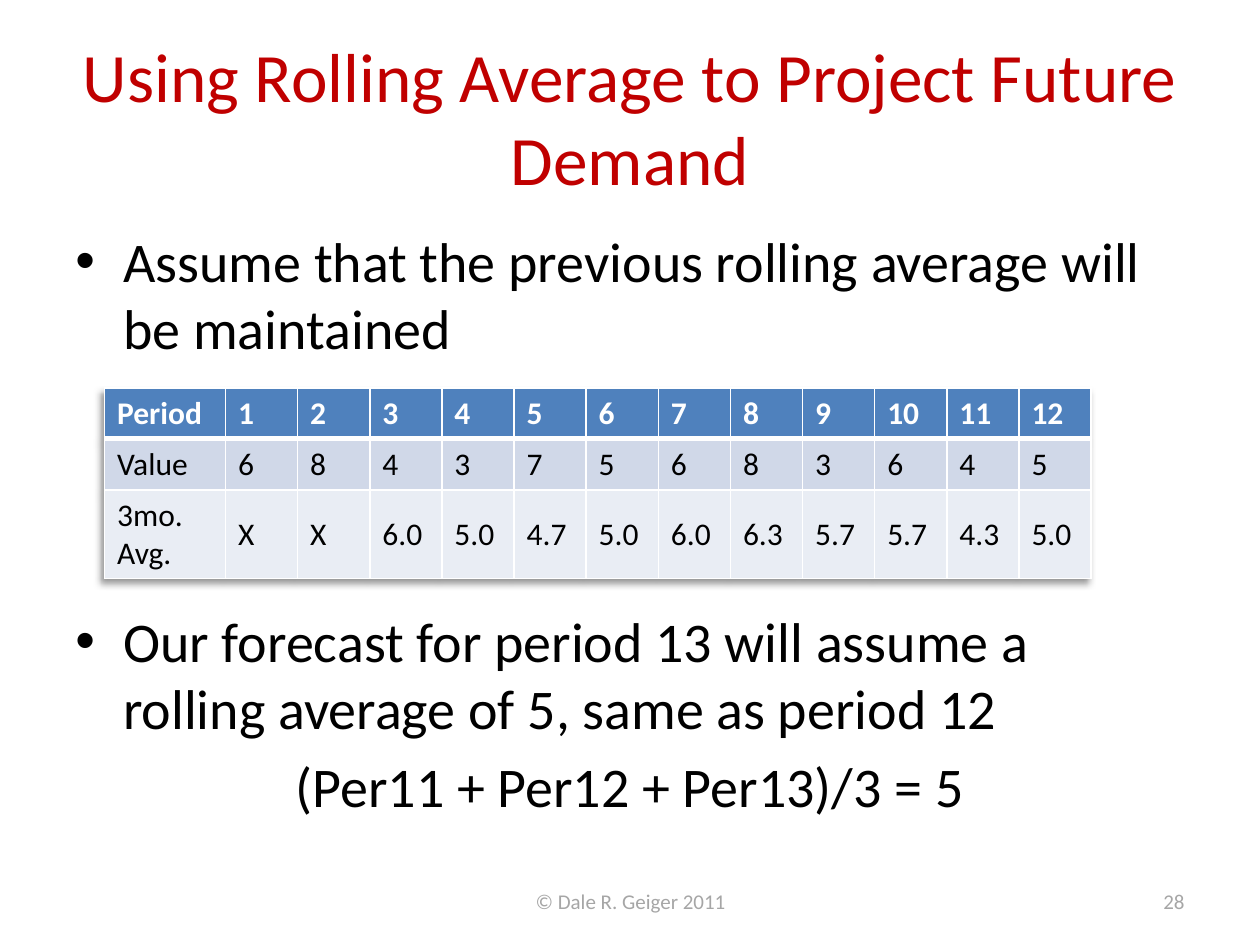
from dataclasses import dataclass

from lxml import etree
from pptx import Presentation
from pptx.dml.color import RGBColor
from pptx.enum.text import MSO_ANCHOR, PP_ALIGN
from pptx.oxml import parse_xml
from pptx.oxml.ns import nsdecls, qn
from pptx.util import Inches, Pt

LEFT, CENTER, RIGHT = PP_ALIGN.LEFT, PP_ALIGN.CENTER, PP_ALIGN.RIGHT
TOP, MIDDLE = MSO_ANCHOR.TOP, MSO_ANCHOR.MIDDLE
FONT = "Calibri"
COLORS = {
    "title": "C00000",
    "text": "000000",
    "footer": "A6A6A6",
    "white": "FFFFFF",
    "header": "4F81BD",
    "band": "D0D8E8",
    "pale": "E9EDF4",
}
BULLET_INDENT = Inches(0.38)
LABEL_WIDTH, TABLE_WIDTH = 0.96, 7.83


@dataclass
class Line:
    text: str
    align: PP_ALIGN = LEFT
    bullet: bool = False
    space_before: float = 0


@dataclass
class TextBlock:
    left: float
    top: float
    width: float
    height: float
    size: float
    color: str
    anchor: MSO_ANCHOR
    lines: list[Line]


@dataclass
class TableRow:
    values: list[str]
    height: float
    fill: str
    color: str = "text"
    bold: bool = False
    anchor: MSO_ANCHOR = MIDDLE
    bottom_border: float = 1


BLOCKS = [
    TextBlock(0.5, 0.3, 9, 1.25, 39.6, "title", MIDDLE,
              [Line("Using Rolling Average to Project Future Demand", CENTER)]),
    TextBlock(0.5, 1.75, 9, 4.95, 32, "text", TOP, [
        Line("Assume that the previous rolling average will be maintained", bullet=True),
        Line("Our forecast for period 13 will assume a rolling average of 5, "
             "same as period 12", bullet=True, space_before=140),
        Line("(Per11 + Per12 + Per13)/3 = 5", CENTER, space_before=6),
    ]),
    TextBlock(3.42, 6.95, 3.17, 0.4, 12, "footer", MIDDLE,
              [Line("© Dale R. Geiger 2011", CENTER)]),
    TextBlock(7.17, 6.95, 2.33, 0.4, 12, "footer", MIDDLE, [Line("28", RIGHT)]),
]
ROWS = [
    TableRow(["Period", *map(str, range(1, 13))], 0.4, "header", "white", True, TOP, 3),
    TableRow(["Value", *"684375683645"], 0.41, "band"),
    TableRow(["3mo. Avg.", "X", "X", "6.0", "5.0", "4.7", "5.0", "6.0", "6.3",
              "5.7", "5.7", "4.3", "5.0"], 0.7, "pale"),
]


def rgb(name: str) -> RGBColor:
    return RGBColor.from_string(COLORS[name])


def format_runs(para, size: float, color: str, bold: bool = False) -> None:
    for span in para.runs:
        span.font.name = FONT
        span.font.size = Pt(size)
        span.font.bold = bold
        span.font.color.rgb = rgb(color)


def add_bullet(para) -> None:
    properties = para._p.get_or_add_pPr()
    properties.set("marL", str(BULLET_INDENT))
    properties.set("indent", str(-BULLET_INDENT))
    etree.SubElement(properties, qn("a:buFont")).set("typeface", "Arial")
    etree.SubElement(properties, qn("a:buChar")).set("char", "•")


def add_text(page, block: TextBlock) -> None:
    box = page.shapes.add_textbox(Inches(block.left), Inches(block.top),
                                  Inches(block.width), Inches(block.height))
    frame = box.text_frame
    frame.word_wrap = True
    frame.vertical_anchor = block.anchor
    frame.text = "\n".join(line.text for line in block.lines)
    for para, line in zip(frame.paragraphs, block.lines):
        para.alignment = line.align
        para.space_before = Pt(line.space_before)
        if line.bullet:
            add_bullet(para)
        format_runs(para, block.size, block.color)


def set_borders(cell, top: float, bottom: float) -> None:
    properties = cell._tc.get_or_add_tcPr()
    widths = {"lnL": 1, "lnR": 1, "lnT": top, "lnB": bottom}
    for index, (side, width) in enumerate(widths.items()):
        properties.insert(index, parse_xml(
            f'<a:{side} {nsdecls("a")} w="{Pt(width)}"><a:solidFill>'
            f'<a:srgbClr val="{COLORS["white"]}"/></a:solidFill></a:{side}>'))


def add_table_shadow(table) -> None:
    table._tbl.tblPr.insert(0, parse_xml(
        f'<a:effectLst {nsdecls("a")}>'
        f'<a:outerShdw blurRad="{Pt(4)}" dist="{Pt(3)}" dir="8100000" algn="tr" '
        f'rotWithShape="0"><a:srgbClr val="{COLORS["text"]}"><a:alpha val="40000"/>'
        '</a:srgbClr></a:outerShdw></a:effectLst>'))


def add_average_table(page, rows: list[TableRow]) -> None:
    periods = len(rows[0].values) - 1
    height = sum(row.height for row in rows)
    table = page.shapes.add_table(len(rows), periods + 1, Inches(0.83), Inches(3.08),
                                  Inches(TABLE_WIDTH), Inches(height)).table
    add_table_shadow(table)
    for index, column in enumerate(table.columns):
        column.width = Inches((TABLE_WIDTH - LABEL_WIDTH) / periods if index else LABEL_WIDTH)
    top_border = 1
    for row_index, row in enumerate(rows):
        table.rows[row_index].height = Inches(row.height)
        for column_index, value in enumerate(row.values):
            cell = table.cell(row_index, column_index)
            cell.text_frame.text = value
            cell.vertical_anchor = row.anchor
            cell.fill.solid()
            cell.fill.fore_color.rgb = rgb(row.fill)
            set_borders(cell, top_border, row.bottom_border)
            format_runs(cell.text_frame.paragraphs[0], 18, row.color, row.bold)
        top_border = row.bottom_border


def main() -> None:
    deck = Presentation()
    deck.slide_width, deck.slide_height = Inches(10), Inches(7.5)
    page = deck.slides.add_slide(deck.slide_layouts[6])
    for block in BLOCKS:
        add_text(page, block)
    add_average_table(page, ROWS)
    deck.save("out.pptx")


if __name__ == "__main__":
    main()
